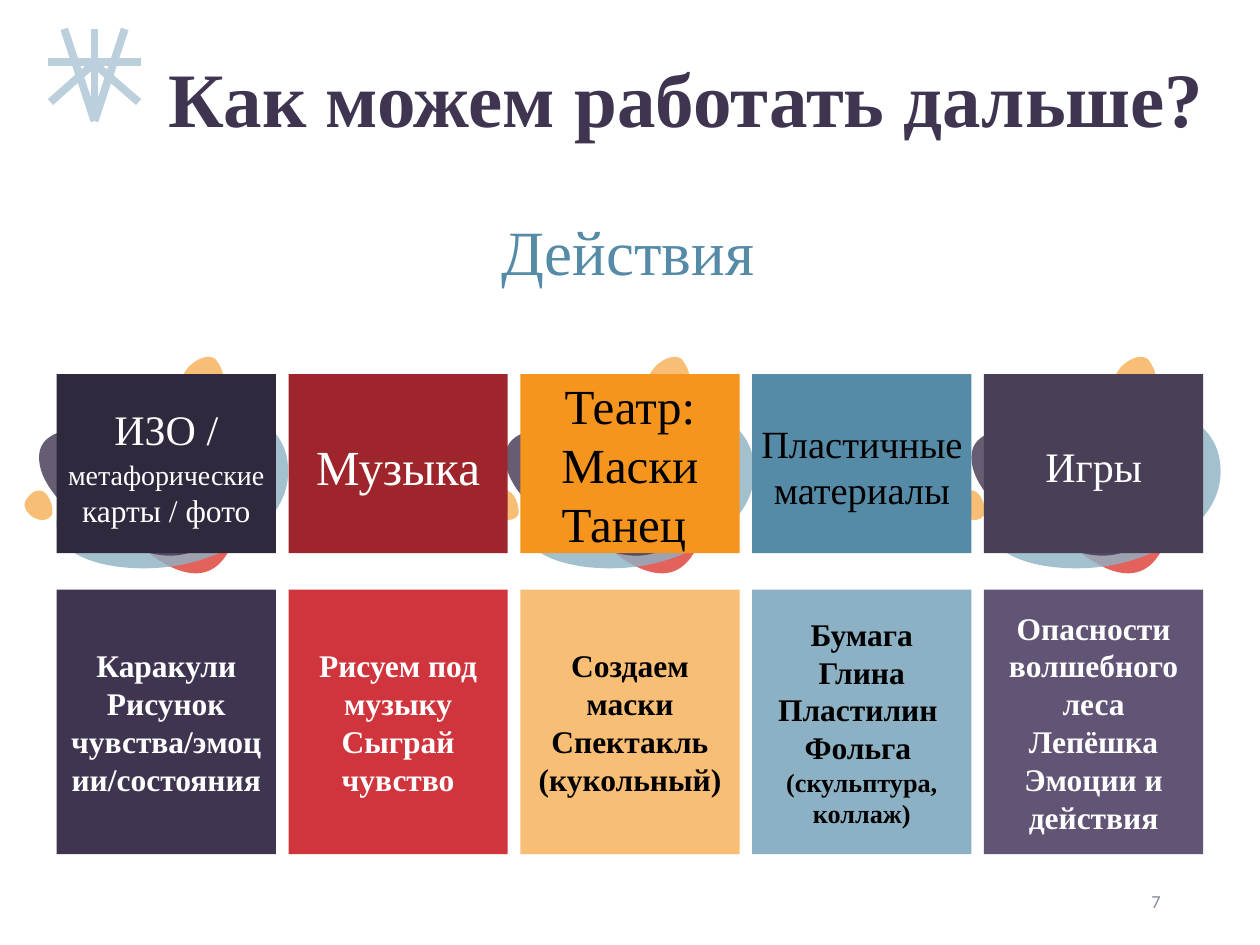
from lxml.etree import SubElement
from pptx import Presentation
from pptx.dml.color import RGBColor
from pptx.enum.shapes import MSO_CONNECTOR, MSO_SHAPE
from pptx.enum.text import MSO_ANCHOR, MSO_AUTO_SIZE, PP_ALIGN
from pptx.oxml.ns import qn
from pptx.util import Inches, Pt

WHITE = RGBColor(0xFF, 0xFF, 0xFF)
BLACK = RGBColor(0x00, 0x00, 0x00)
PLUM = RGBColor(0x40, 0x35, 0x51)
DARK_PLUM = RGBColor(0x30, 0x28, 0x3D)
MID_PLUM = RGBColor(0x49, 0x3F, 0x57)
LIGHT_PLUM = RGBColor(0x61, 0x54, 0x74)
DARK_RED = RGBColor(0x9E, 0x25, 0x2B)
RED = RGBColor(0xD0, 0x34, 0x3C)
CORAL = RGBColor(0xE4, 0x62, 0x5C)
ORANGE = RGBColor(0xF5, 0x95, 0x1D)
PEACH = RGBColor(0xF9, 0xBE, 0x75)
BLUE = RGBColor(0x56, 0x8B, 0xA7)
LIGHT_BLUE = RGBColor(0x8D, 0xB1, 0xC4)
PALE_BLUE = RGBColor(0xBB, 0xD0, 0xDC)
GREY = RGBColor(0x84, 0x8B, 0x98)
SERIF = "Times New Roman"

COLUMN_LEFT, COLUMN_PITCH, COLUMN_WIDTH = 0.45, 1.84, 1.74
METHOD_TOP, METHOD_HEIGHT, LABEL_MIDDLE = 2.97, 1.42, 3.7
TASK_TOP, TASK_HEIGHT = 4.68, 2.1
BLOB_PITCH = 3.7

METHODS = [
    (DARK_PLUM, WHITE, (1.74, 1.01),
     [[("ИЗО / ", 24), ("метафорические", 16), (" карты / фото", 18)]]),
    (DARK_RED, WHITE, (1.36, 0.47), [[("Музыка", 28)]]),
    (ORANGE, BLACK, None, [[("Театр: Маски", 28)], [("Танец ", 28)]]),
    (BLUE, BLACK, (1.71, 0.74), [[("Пластичные материалы", 22)]]),
    (MID_PLUM, WHITE, (1.36, 0.4), [[("Игры", 24)]]),
]
TASKS = [
    (PLUM, WHITE, [[("Каракули", 18)], [("Рисунок чувства/эмоции/состояния", 18)]]),
    (RED, WHITE, [[("Рисуем под музыку", 18)], [("Сыграй чувство", 18)]]),
    (PEACH, BLACK, [[("Создаем маски", 18)], [("Спектакль (кукольный)", 18)]]),
    (LIGHT_BLUE, BLACK, [[("Бумага", 18)], [("Глина", 18)], [("Пластилин ", 18)],
                         [("Фольга ", 18)], [("(скульптура, коллаж)", 15)]]),
    (LIGHT_PLUM, WHITE, [[("Опасности волшебного леса", 18)], [("Лепёшка", 18)],
                         [("Эмоции и действия", 18)]]),
]
BLOBS = [
    (CORAL, 100, [(0.7, 3.67), (0.73, 4), (1.24, 4.58), (1.58, 4.55), (1.92, 4.52), (1.96, 3.88),
                  (1.93, 3.55), (1.89, 3.22), (1.59, 2.98), (1.25, 3.01), (0.91, 3.05),
                  (0.66, 3.34), (0.7, 3.67)]),
    (LIGHT_BLUE, 80, [(0.47, 4.26), (0.57, 4.48), (1.03, 4.55), (1.4, 4.49), (1.77, 4.43),
                      (2.36, 4.15), (2.28, 3.65), (2.25, 3.45), (2.04, 3.1), (1.27, 3.33),
                      (0.84, 3.46), (0.34, 3.97), (0.47, 4.26)]),
    (PLUM, 80, [(0.31, 3.63), (0.31, 4), (0.98, 4.41), (1.35, 4.41), (1.72, 4.41), (2.12, 4),
                (2.12, 3.63), (2.12, 3.26), (1.96, 3), (1.41, 3.29), (1.08, 3.46),
                (0.31, 3.26), (0.31, 3.63)]),
    (PEACH, 100, [(1.46, 3.12), (1.5, 3.16), (1.68, 3.14), (1.74, 3.07), (1.81, 3), (1.75, 2.9),
                  (1.71, 2.85), (1.66, 2.81), (1.57, 2.84), (1.5, 2.91), (1.43, 2.99),
                  (1.41, 3.08), (1.46, 3.12)]),
    (PEACH, 100, [(0.41, 4.09), (0.43, 4.05), (0.4, 3.93), (0.34, 3.9), (0.28, 3.87), (0.22, 3.94),
                  (0.2, 3.98), (0.18, 4.02), (0.21, 4.07), (0.27, 4.11), (0.32, 4.14),
                  (0.39, 4.13), (0.41, 4.09)]),
]
RAYS = [((0.75, 0.23), (0.75, 0.96)), ((0.51, 0.23), (0.75, 0.96)), ((0.99, 0.23), (0.75, 0.96)),
        ((1.12, 0.49), (0.38, 0.49)), ((0.76, 0.49), (0.4, 0.81)), ((0.73, 0.49), (1.1, 0.81))]


def paint(shape, color, opacity=100):
    """Give a shape a flat fill without outline or shadow."""
    shape.shadow.inherit = False
    shape.fill.solid()
    shape.fill.fore_color.rgb = color
    shape.line.fill.background()
    if opacity < 100:
        tint = shape._element.spPr.find(qn("a:solidFill"))[0]
        SubElement(tint, qn("a:alpha")).set("val", str(opacity * 1000))


def write(frame, paragraphs, color, bold=False, align=PP_ALIGN.CENTER, font=SERIF, after=0):
    """Fill a text frame with paragraphs of (text, size) runs."""
    frame.vertical_anchor = MSO_ANCHOR.MIDDLE
    for index, parts in enumerate(paragraphs):
        paragraph = frame.add_paragraph() if index else frame.paragraphs[0]
        paragraph.alignment = align
        paragraph.space_after = Pt(after)
        for text, size in parts:
            run = paragraph.add_run()
            run.text = text
            run.font.name, run.font.size, run.font.bold = font, Pt(size), bold
            run.font.color.rgb = color


def set_margins(frame, across, down):
    """Set the side and the top and bottom margins of a frame."""
    frame.margin_left = frame.margin_right = Inches(across)
    frame.margin_top = frame.margin_bottom = Inches(down)


def add_label(slide, left, top, width, height, wrap=True):
    """Add an empty text box and return its frame."""
    frame = slide.shapes.add_textbox(*map(Inches, (left, top, width, height))).text_frame
    frame.word_wrap = wrap
    return frame


def add_card(slide, column, top, height, color):
    """Add a coloured card in a grid column and return its frame."""
    left = COLUMN_LEFT + column * COLUMN_PITCH
    card = slide.shapes.add_shape(
        MSO_SHAPE.RECTANGLE, *map(Inches, (left, top, COLUMN_WIDTH, height)))
    paint(card, color)
    card.text_frame.word_wrap = True
    return card.text_frame


def add_method(slide, column, color, ink, label_size, paragraphs):
    """Add a method card with its label centred on it."""
    frame = add_card(slide, column, METHOD_TOP, METHOD_HEIGHT, color)
    if label_size is None:
        set_margins(frame, 0.07, 0.04)
        write(frame, paragraphs, ink)
        return
    width, height = label_size
    center = COLUMN_LEFT + column * COLUMN_PITCH + COLUMN_WIDTH / 2
    label = add_label(slide, center - width / 2, LABEL_MIDDLE - height / 2, width, height)
    set_margins(label, 0, 0)
    write(label, paragraphs, ink, after=9)


def round_off(outline):
    """Turn each three straight segments of an outline into one cubic curve."""
    segments = list(outline.iter(qn("a:lnTo")))
    for start in range(0, len(segments), 3):
        curve = segments[start]
        curve.tag = qn("a:cubicBezTo")
        for segment in segments[start + 1:start + 3]:
            curve.append(segment[0])
            segment.getparent().remove(segment)


def add_blob(slide, shift, color, opacity, knots):
    """Add one rounded spot, moved right by the shift."""
    points = [(Inches(x + shift), Inches(y)) for x, y in knots]
    builder = slide.shapes.build_freeform(*points[0], scale=1.0)
    builder.add_line_segments(points[1:], close=True)
    blob = builder.convert_to_shape()
    round_off(blob._element.spPr)
    paint(blob, color, opacity)


def add_ray(slide, start, end):
    """Add one stroke of the corner ornament."""
    ray = slide.shapes.add_connector(MSO_CONNECTOR.STRAIGHT, *map(Inches, (*start, *end)))
    ray.line.color.rgb = PALE_BLUE
    ray.line.width = Pt(4.5)
    SubElement(ray._element.spPr, qn("a:effectLst"))


def add_title(slide, text):
    """Place and format the title placeholder."""
    title = slide.shapes.title
    title.left, title.top, title.width, title.height = map(Inches, (1.21, 0.19, 8.48, 1.24))
    title.text_frame.auto_size = MSO_AUTO_SIZE.NONE
    write(title.text_frame, [[(text, 44)]], PLUM, bold=True)
    title.text_frame.paragraphs[0].line_spacing = 0.9


def main():
    """Build the slide and save it."""
    deck = Presentation()
    deck.slide_width, deck.slide_height = Inches(10), Inches(7.5)
    slide = deck.slides.add_slide(deck.slide_layouts[5])
    for cluster in range(3):
        for blob in BLOBS:
            add_blob(slide, cluster * BLOB_PITCH, *blob)
    add_title(slide, "Как можем работать дальше?")
    write(add_label(slide, 7.06, 6.95, 2.25, 0.4), [[("7", 10.5)]], GREY,
          align=PP_ALIGN.RIGHT, font="Calibri")
    for column, method in enumerate(METHODS):
        add_method(slide, column, *method)
    for column, (color, ink, paragraphs) in enumerate(TASKS):
        write(add_card(slide, column, TASK_TOP, TASK_HEIGHT, color), paragraphs, ink, bold=True)
    for start, end in RAYS:
        add_ray(slide, start, end)
    write(add_label(slide, 3.88, 1.63, 2.23, 0.71, wrap=False), [[("Действия", 36)]], BLUE,
          align=PP_ALIGN.LEFT)
    deck.save("out.pptx")


if __name__ == "__main__":
    main()
